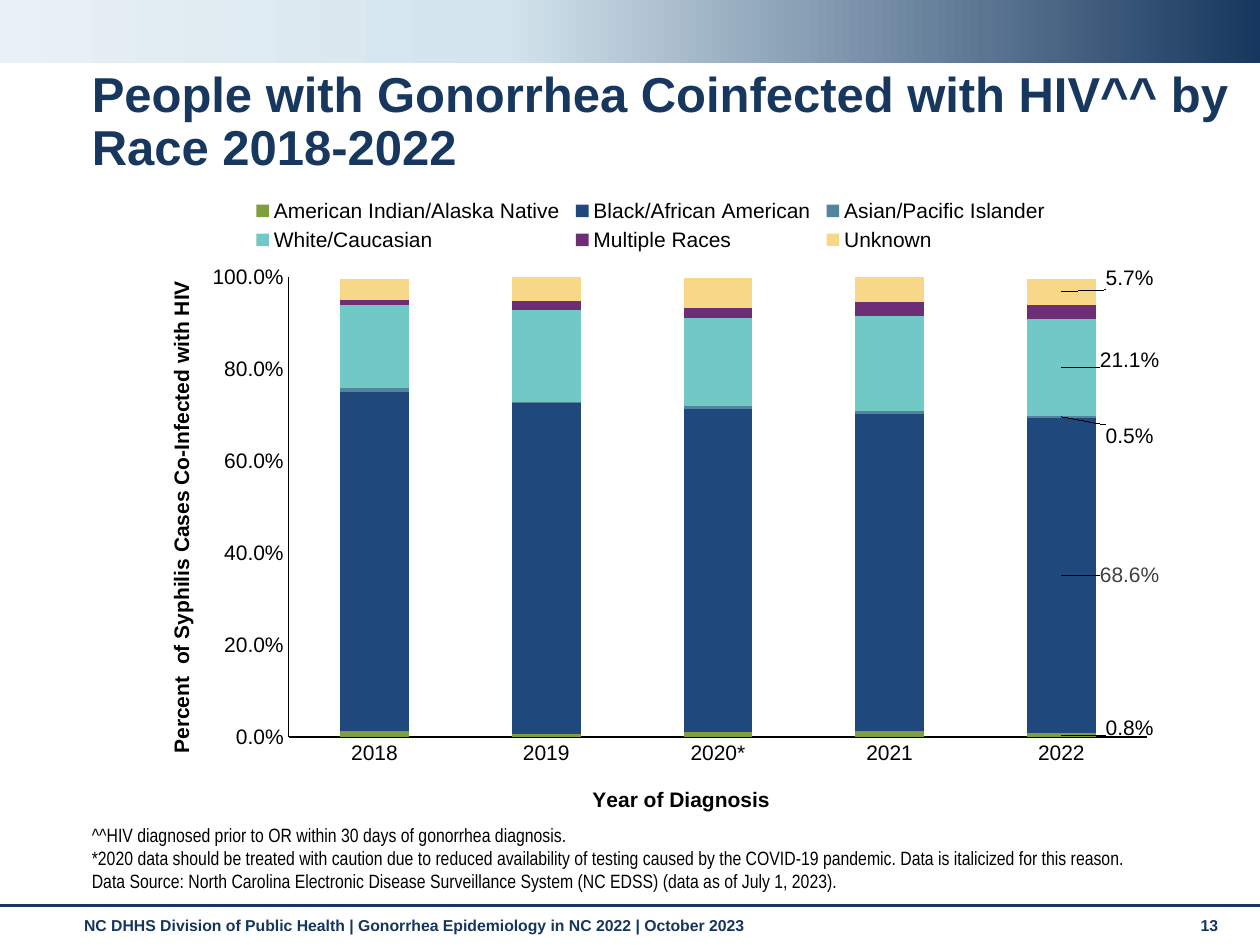
from copy import deepcopy

from lxml.etree import SubElement
from pptx import Presentation
from pptx.chart.data import CategoryChartData
from pptx.dml.color import RGBColor
from pptx.enum.chart import XL_CHART_TYPE, XL_LEGEND_POSITION, XL_TICK_MARK
from pptx.enum.shapes import MSO_CONNECTOR, MSO_SHAPE
from pptx.enum.text import MSO_ANCHOR
from pptx.oxml.ns import qn
from pptx.util import Pt

COLORS = {
    "navy": "17375E", "footer": "15365E", "black": "000000", "gray": "404040",
    "pale": "E9F1F6", "sky": "D3E4ED", "green": "7F9E3F", "blue": "1F497D",
    "steel": "52849C", "teal": "71C9C5", "purple": "6D2E75", "yellow": "F6D888",
}
YEARS = ["2018", "2019", "2020*", "2021", "2022"]
# name, color, values, vertical shift of the last label (None: no label), label color
SERIES = [
    ("American Indian/Alaska Native", "green", (0.014, 0.007, 0.011, 0.012, 0.008), -0.01, "black"),
    ("Black/African American", "blue", (0.736, 0.719, 0.702, 0.69, 0.686), 0, "gray"),
    ("Asian/Pacific Islander", "steel", (0.008, 0.003, 0.006, 0.006, 0.005), 0.03, "black"),
    ("White/Caucasian", "teal", (0.182, 0.2, 0.193, 0.207, 0.211), -0.01, "black"),
    ("Multiple Races", "purple", (0.01, 0.02, 0.02, 0.03, 0.03), None, "black"),
    ("Unknown", "yellow", (0.045, 0.052, 0.066, 0.058, 0.057), -0.02, "black"),
]
NOTES = [
    "^^HIV diagnosed prior to OR within 30 days of gonorrhea diagnosis.",
    "*2020 data should be treated with caution due to reduced availability of testing "
    "caused by the COVID-19 pandemic. Data is italicized for this reason.",
    "Data Source: North Carolina Electronic Disease Surveillance System (NC EDSS) "
    "(data as of July 1, 2023).",
]
PERCENT = "0.0%"


def rgb(name):
    return RGBColor.from_string(COLORS[name])


def style_font(font, size, color="black", bold=False, name="Arial"):
    font.name, font.size, font.bold = name, Pt(size), bold
    font.color.rgb = rgb(color)


def add_text(slide, box, lines, anchor=MSO_ANCHOR.TOP, spacing=None, **font_format):
    shape = slide.shapes.add_textbox(*map(Pt, box))
    frame = shape.text_frame
    frame.word_wrap = True
    frame.vertical_anchor = anchor
    frame.text = "\n".join(lines)
    for paragraph in frame.paragraphs:
        paragraph.line_spacing = spacing
        style_font(paragraph.runs[0].font, **font_format)


def add_banner(slide, box):
    banner = slide.shapes.add_shape(MSO_SHAPE.RECTANGLE, *map(Pt, box))
    banner.shadow.inherit = False
    banner.line.fill.background()
    banner.fill.gradient()
    banner.fill.gradient_angle = 0
    stop_list = next(banner._element.iter(qn("a:gsLst")))
    stop_list.insert(1, deepcopy(stop_list[0]))
    stops = zip(banner.fill.gradient_stops, ("pale", "sky", "navy"), (0, 0.4, 1))
    for stop, color, position in stops:
        stop.color.rgb = rgb(color)
        stop.position = position


def add_footer(slide, box):
    left, top, width, height = box
    rule = slide.shapes.add_connector(
        MSO_CONNECTOR.STRAIGHT, Pt(left), Pt(top), Pt(left + width), Pt(top))
    rule.line.color.rgb = rgb("navy")
    rule.line.width = Pt(1.75)
    SubElement(rule._element.spPr, qn("a:effectLst"))
    footer_format = {"size": 9, "color": "footer", "bold": True}
    add_text(slide, (left + 41, top + 2, 629, height - 2),
             ["NC DHHS Division of Public Health | Gonorrhea Epidemiology in NC 2022 | October 2023"],
             **footer_format)
    add_text(slide, (left + 679, top + 2, 32, height - 2), ["13"], **footer_format)


def set_layout(parent, index, **values):
    """Place a chart part by fractions of the chart, as child number index."""
    for old in parent.findall(qn("c:layout")):
        parent.remove(old)
    layout = SubElement(parent, qn("c:layout"))
    parent.insert(index, layout)
    manual = SubElement(layout, qn("c:manualLayout"))
    for tag, value in values.items():
        SubElement(manual, qn(f"c:{tag}")).set("val", str(value))


def style_axis(axis, title, x, y):
    axis.has_major_gridlines = False
    axis.major_tick_mark = axis.minor_tick_mark = XL_TICK_MARK.NONE
    axis.format.line.color.rgb = rgb("black")
    axis.format.line.width = Pt(0.75)
    style_font(axis.tick_labels.font, 12)
    frame = axis.axis_title.text_frame
    frame.text = title
    style_font(frame.paragraphs[0].runs[0].font, 12, bold=True)
    set_layout(axis.axis_title._element, 1, xMode="edge", yMode="edge", x=x, y=y)


def label_last_point(series, shift, color):
    """Show the value of the last year to the right of its bar."""
    last = len(YEARS) - 1
    style_font(series.points[last].data_label.font, 12, color)
    labels = series.data_labels
    labels.show_value = False
    labels.number_format = PERCENT
    labels.number_format_is_linked = False
    style_font(labels.font, 12, color)
    label = labels._element.find(qn("c:dLbl"))
    set_layout(label, 1, x=0.066, y=shift)
    number_format = SubElement(label, qn("c:numFmt"))
    number_format.set("formatCode", PERCENT)
    number_format.set("sourceLinked", "0")
    label.insert(2, number_format)


def add_race_chart(slide, box):
    data = CategoryChartData(number_format=PERCENT)
    data.categories = YEARS
    for name, _, values, _, _ in SERIES:
        data.add_series(name, values)
    chart = slide.shapes.add_chart(XL_CHART_TYPE.COLUMN_STACKED, *map(Pt, box), data).chart
    style_font(chart.font, 10)
    chart.has_title = False
    chart.has_legend = True
    chart.legend.position = XL_LEGEND_POSITION.TOP
    chart.legend.include_in_layout = False
    style_font(chart.legend.font, 12)
    set_layout(chart.legend._element, 1, xMode="edge", yMode="edge", x=0.11, y=0.01, w=0.78, h=0.1)

    style_axis(chart.category_axis, "Year of Diagnosis", x=0.44, y=0.92)
    style_axis(chart.value_axis, "Percent  of Syphilis Cases Co-Infected with HIV", x=0.03, y=0.14)
    chart.value_axis.minimum_scale = 0
    chart.value_axis.maximum_scale = 1
    chart.value_axis.major_unit = 0.2
    chart.value_axis.tick_labels.number_format = PERCENT
    chart.value_axis.tick_labels.number_format_is_linked = False

    plot = chart.plots[0]
    plot.gap_width, plot.overlap, plot.vary_by_categories = 150, 100, False
    for series, (_, color, _, shift, label_color) in zip(plot.series, SERIES):
        series.format.fill.solid()
        series.format.fill.fore_color.rgb = rgb(color)
        if shift is not None:
            label_last_point(series, shift, label_color)
    plot_area = next(chart._chartSpace.iter(qn("c:plotArea")))
    set_layout(plot_area, 0, layoutTarget="inner", xMode="edge", yMode="edge",
               x=0.15, y=0.14, w=0.83, h=0.71)


def main():
    presentation = Presentation()
    presentation.slide_width, presentation.slide_height = Pt(720), Pt(540)
    slide = presentation.slides.add_slide(presentation.slide_layouts[6])
    add_banner(slide, (0, 0, 720, 36))
    add_footer(slide, (0, 517.5, 720, 22.5))
    add_text(slide, (45.4, 36.7, 665.3, 43.2),
             ["People with Gonorrhea Coinfected with HIV^^ by Race 2018-2022"],
             spacing=0.9, size=28, color="navy", bold=True)
    add_text(slide, (45.4, 468, 629.3, 45.4), NOTES, anchor=MSO_ANCHOR.BOTTOM,
             size=11, name="Arial Narrow")
    add_race_chart(slide, (76.3, 106.6, 591.1, 370.1))
    presentation.save("out.pptx")


if __name__ == "__main__":
    main()
